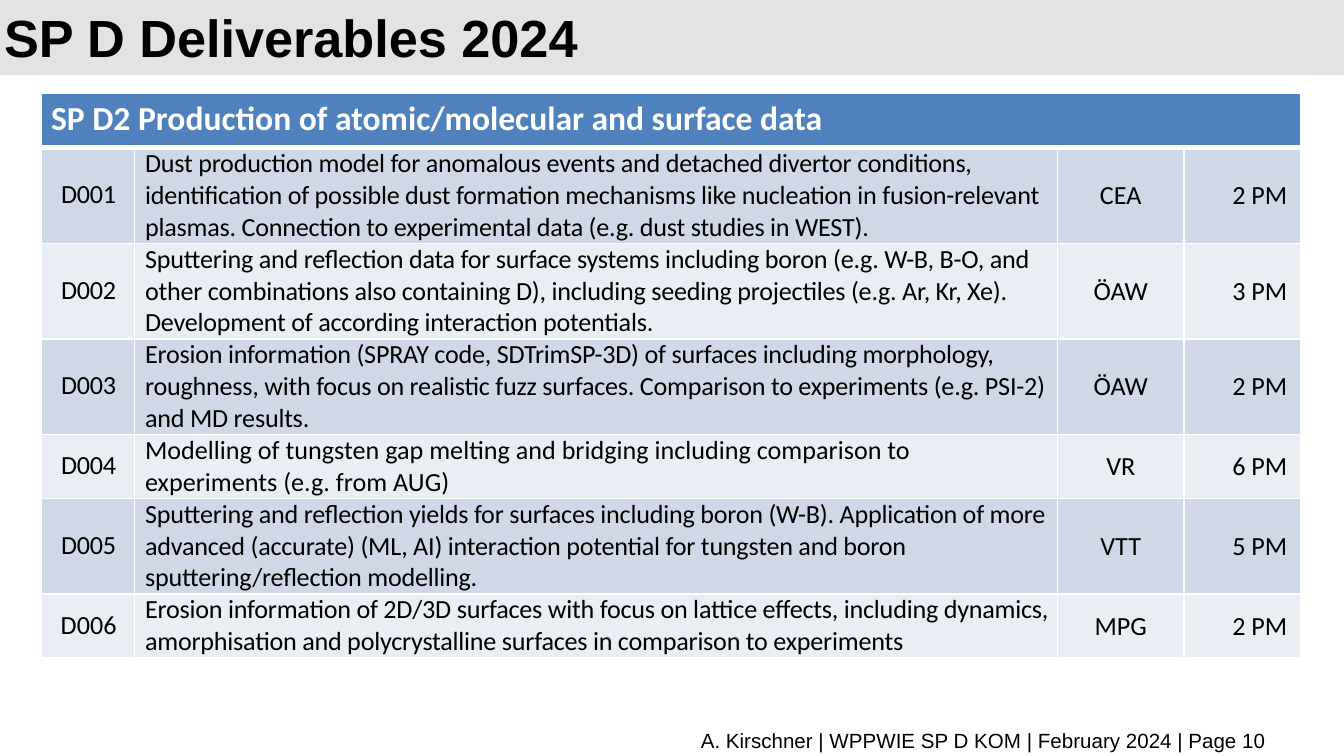
"""Build the SP D deliverables slide with its table of work packages."""
from lxml import etree
from pptx import Presentation
from pptx.dml.color import RGBColor
from pptx.enum.shapes import MSO_SHAPE
from pptx.enum.text import MSO_ANCHOR, PP_ALIGN
from pptx.oxml.ns import qn
from pptx.util import Inches, Pt

LEFT, CENTER, RIGHT = PP_ALIGN.LEFT, PP_ALIGN.CENTER, PP_ALIGN.RIGHT
MIDDLE = MSO_ANCHOR.MIDDLE
COLORS = {"band": "E3E3E3", "header": "4F81BD", "odd": "D0D8E8",
          "even": "E9EDF4", "white": "FFFFFF", "black": "000000"}
HEADING = "SP D2 Production of atomic/molecular and surface data"
DELIVERABLES = [
    ("D001", "Dust production model for anomalous events and detached divertor conditions, "
     "identification of possible dust formation mechanisms like nucleation in fusion-relevant "
     "plasmas. Connection to experimental data (e.g. dust studies in WEST).", "CEA", "2 PM"),
    ("D002", "Sputtering and reflection data for surface systems including boron (e.g. W-B, B-O, "
     "and other combinations also containing D), including seeding projectiles (e.g. Ar, Kr, Xe). "
     "Development of according interaction potentials.", "ÖAW", "3 PM"),
    ("D003", "Erosion information (SPRAY code, SDTrimSP-3D) of surfaces including morphology, "
     "roughness, with focus on realistic fuzz surfaces. Comparison to experiments (e.g. PSI-2) "
     "and MD results.", "ÖAW", "2 PM"),
    ("D004", "Modelling of tungsten gap melting and bridging including comparison to "
     "experiments (e.g. from AUG)", "VR", "6 PM"),
    ("D005", "Sputtering and reflection yields for surfaces including boron (W-B). Application "
     "of more advanced (accurate) (ML, AI) interaction potential for tungsten and boron "
     "sputtering/reflection modelling.", "VTT", "5 PM"),
    ("D006", "Erosion information of 2D/3D surfaces with focus on lattice effects, including "
     "dynamics, amorphisation and polycrystalline surfaces in comparison to experiments",
     "MPG", "2 PM"),
]
COLUMN_WIDTHS = [0.69, 6.87, 0.94, 0.87]
COLUMN_ALIGNMENTS = [CENTER, LEFT, CENTER, RIGHT]
NORMAL_SPACING = {(4, 1), (6, 0)}


def write(frame, text, font, size, color, bold=False, align=LEFT):
    frame.text = text
    para = frame.paragraphs[0]
    para.alignment = align
    span = para.runs[0]
    span.font.name = font
    span.font.size = Pt(size)
    span.font.bold = bold
    span.font.color.rgb = RGBColor.from_string(COLORS[color])
    return para


def style_cell(cell, fill, bottom_width):
    properties = cell._tc.get_or_add_tcPr()
    for side, width in (("L", 1), ("R", 1), ("T", 1), ("B", bottom_width)):
        line = etree.SubElement(properties, qn(f"a:ln{side}"), w=str(Pt(width)))
        solid = etree.SubElement(line, qn("a:solidFill"))
        etree.SubElement(solid, qn("a:srgbClr"), val=COLORS["white"])
    cell.fill.solid()
    cell.fill.fore_color.rgb = RGBColor.from_string(COLORS[fill])


deck = Presentation()
deck.slide_width = Inches(10)
deck.slide_height = deck.slide_width * 9 // 16
page = deck.slides.add_slide(deck.slide_layouts[5])

band = page.shapes.add_shape(MSO_SHAPE.RECTANGLE, 0, 0, Inches(10), Inches(0.56))
band.shadow.inherit = False
band.fill.solid()
band.fill.fore_color.rgb = RGBColor.from_string(COLORS["band"])
band.line.fill.background()
page.shapes._spTree.insert(2, band._element)

title = page.shapes.title
title.left, title.top = Inches(-0.07), Inches(0.09)
title.width, title.height = Inches(8.25), Inches(0.38)
title.text_frame.vertical_anchor = MIDDLE
para = write(title.text_frame, "SP D Deliverables 2024", "Arial", 28, "black", bold=True)
para.line_spacing = Pt(32)

footer = page.shapes.add_textbox(Inches(0.51), Inches(5.37), Inches(9.01), Inches(0.22))
footer.text_frame.word_wrap = True
write(footer.text_frame, "A. Kirschner | WPPWIE SP D KOM | February 2024 | Page 10",
      "Arial", 11, "black", align=RIGHT)

table = page.shapes.add_table(len(DELIVERABLES) + 1, len(COLUMN_WIDTHS), Inches(0.31),
                              Inches(0.69), Inches(9.37), Inches(2.87)).table
for column, width in zip(table.columns, COLUMN_WIDTHS):
    column.width = Inches(width)
for row in table.rows:
    row.height = Inches(0.41)

header = table.cell(0, 0)
header.merge(table.cell(0, 3))
header.margin_left = header.margin_right = Inches(0.07)
header.margin_top = header.margin_bottom = 0
para = write(header.text_frame, HEADING, "Calibri", 18, "white", bold=True)
para.line_spacing = 1.15
for column in range(len(COLUMN_WIDTHS)):
    style_cell(table.cell(0, column), "header", 3)

for row, deliverable in enumerate(DELIVERABLES, start=1):
    for column, text in enumerate(deliverable):
        cell = table.cell(row, column)
        cell.vertical_anchor = MIDDLE
        para = write(cell.text_frame, text, "Calibri", 14, "black",
                     align=COLUMN_ALIGNMENTS[column])
        if column < 2:
            cell.margin_left, cell.margin_right = Inches(0.08), Inches(0.07)
            cell.margin_top, cell.margin_bottom = 0, Inches(0.01)
            if (row, column) not in NORMAL_SPACING:
                para.runs[0]._r.get_or_add_rPr().set("spc", "-15")
        style_cell(cell, "odd" if row % 2 else "even", 1)

deck.save("out.pptx")
